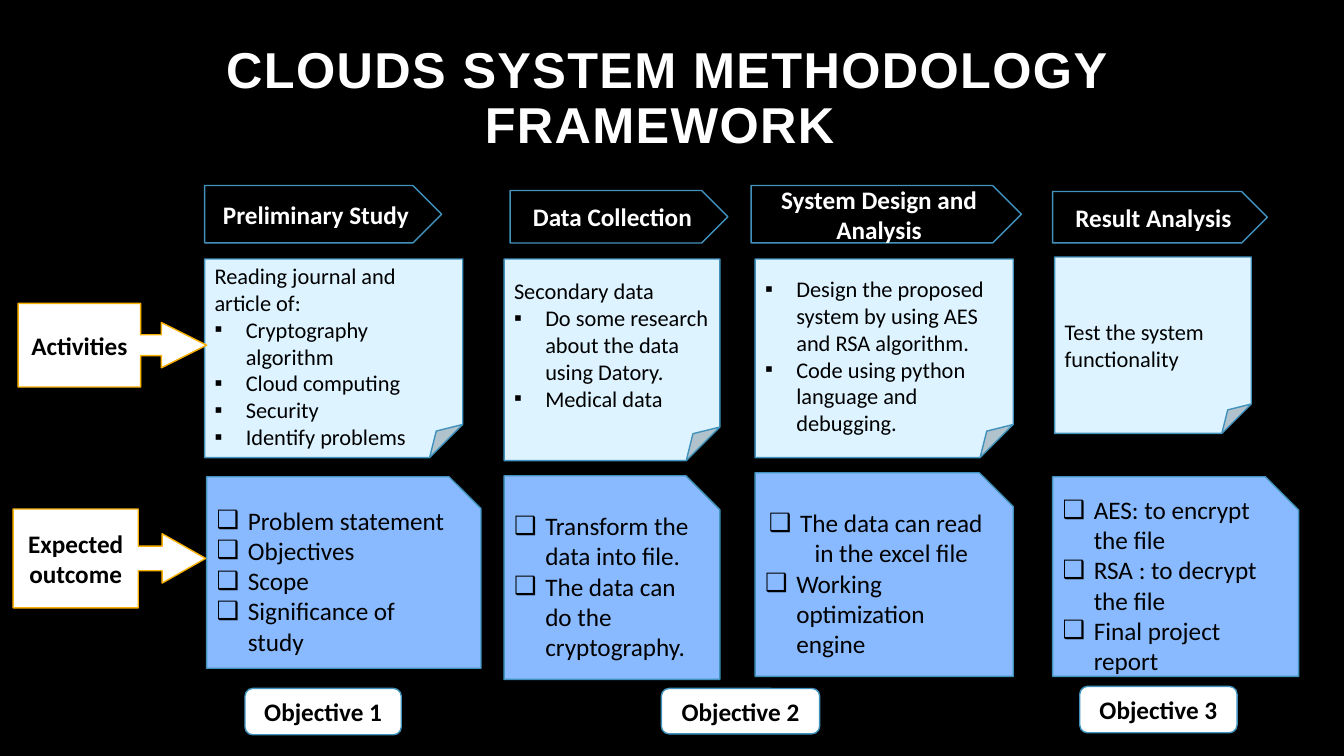
from lxml.etree import SubElement
from pptx import Presentation
from pptx.dml.color import RGBColor
from pptx.enum.shapes import MSO_SHAPE
from pptx.enum.text import MSO_ANCHOR, PP_ALIGN
from pptx.oxml.ns import qn
from pptx.util import Inches, Pt

BLACK = RGBColor(0x00, 0x00, 0x00)
WHITE = RGBColor(0xFF, 0xFF, 0xFF)
TEAL = RGBColor(0x40, 0x92, 0xBD)
AMBER = RGBColor(0xF8, 0xB0, 0x04)
PALE = RGBColor(0xDD, 0xF3, 0xFF)
BLUE = RGBColor(0x89, 0xBA, 0xFF)

deck = Presentation()
deck.slide_width = Inches(13.33)
deck.slide_height = Inches(7.5)
page = deck.slides.add_slide(deck.slide_layouts[6])
page.background.fill.solid()
page.background.fill.fore_color.rgb = BLACK


def add_box(kind, place, fill, line):
    box = page.shapes.add_shape(kind, *[Inches(length) for length in place])
    box.shadow.inherit = False
    box.fill.solid()
    box.fill.fore_color.rgb = fill
    box.line.color.rgb = line
    box.line.width = Pt(1)
    box.text_frame.word_wrap = True
    box.text_frame.vertical_anchor = MSO_ANCHOR.MIDDLE
    return box


def write(box, lines, size=18, color=BLACK, bold=False, align=PP_ALIGN.LEFT, bullet=None):
    frame = box.text_frame
    for number, line in enumerate(lines):
        para = frame.paragraphs[0] if number == 0 else frame.add_paragraph()
        para.alignment = align
        if bullet and not line.startswith(("Reading", "Secondary", "Test")):
            settings = para._p.get_or_add_pPr()
            settings.set("marL", str(Inches(0.31)))
            settings.set("indent", str(-Inches(0.31)))
            SubElement(settings, qn("a:buFont"), typeface="Arial")
            SubElement(settings, qn("a:buChar"), char=bullet)
        span = para.add_run()
        span.text = line
        span.font.name = "Calibri"
        span.font.size = Pt(size)
        span.font.bold = bold
        span.font.color.rgb = color


title = page.shapes.add_textbox(Inches(1.62), Inches(0.29), Inches(10), Inches(1.29))
title.text_frame.word_wrap = True
title.text_frame.vertical_anchor = MSO_ANCHOR.BOTTOM
para = title.text_frame.paragraphs[0]
para.alignment = PP_ALIGN.CENTER
para.line_spacing = 0.9
span = para.add_run()
span.text = "CLOUDS SYSTEM METHODOLOGY FRAMEWORK "
span.font.name = "Arial"
span.font.size = Pt(36)
span.font.bold = True
span.font.color.rgb = WHITE
span._r.get_or_add_rPr().set("spc", "100")

objectives = [(2.43, 6.83, 1.55, 0.46), (6.56, 6.83, 1.57, 0.45), (10.71, 6.81, 1.56, 0.46)]
for number, place in enumerate(objectives, 1):
    box = add_box(MSO_SHAPE.ROUNDED_RECTANGLE, place, WHITE, TEAL)
    write(box, [f"Objective {number}"], bold=True, align=PP_ALIGN.CENTER)

phases = [
    ("Preliminary Study", (2.03, 1.84, 2.35, 0.57)),
    ("Data Collection", (5.06, 1.89, 2.16, 0.52)),
    ("System Design and Analysis", (7.45, 1.84, 2.68, 0.57)),
    ("Result Analysis", (10.44, 1.9, 2.13, 0.51)),
]
for name, place in phases:
    box = add_box(MSO_SHAPE.PENTAGON, place, BLACK, TEAL)
    write(box, [name], color=WHITE, bold=True, align=PP_ALIGN.CENTER)

activities = [
    ((2.03, 2.57, 2.56, 1.97), 0.03, [
        "Reading journal and article of:", "Cryptography algorithm",
        "Cloud computing", "Security", "Identify problems"]),
    ((5, 2.57, 2.14, 2), 0.18, [
        "Secondary data", "Do some research about the data using Datory.",
        "Medical data"]),
    ((7.49, 2.57, 2.56, 1.97), 0.16, [
        "Design the proposed system by using AES and RSA algorithm.",
        "Code using python language and debugging."]),
    ((10.46, 2.55, 1.95, 1.75), 0.61, ["Test the system functionality"]),
]
for place, top, lines in activities:
    box = add_box(MSO_SHAPE.FOLDED_CORNER, place, PALE, TEAL)
    box.text_frame.vertical_anchor = MSO_ANCHOR.TOP
    box.text_frame.margin_top = Inches(top)
    box.text_frame.margin_bottom = 0
    write(box, lines, size=16, bullet="▪")

outcomes = [
    ((2.05, 4.73, 2.72, 1.9), [
        "Problem statement", "Objectives", "Scope", "Significance of study"]),
    ((5, 4.72, 2.14, 2.02), [
        "Transform the data into file.", "The data can do the cryptography."]),
    ((7.49, 4.69, 2.56, 2.02), [
        "The data can read in the excel file", "Working optimization engine"]),
    ((10.44, 4.73, 2.44, 1.98), [
        "AES: to encrypt the file", "RSA : to decrypt the file",
        "Final project report"]),
]
for place, lines in outcomes:
    box = add_box(MSO_SHAPE.SNIP_1_RECTANGLE, place, BLUE, TEAL)
    write(box, lines, bullet="❑")
    if lines[0].startswith("The data"):
        box.text_frame.paragraphs[0].alignment = PP_ALIGN.CENTER

row_labels = [
    ("Activities", (0.18, 3.01, 1.87, 0.83), (0.25, 0.27, 0.54, 0.65)),
    ("Expected outcome", (0.13, 5.05, 1.91, 0.98), (0.25, 0.25, 0.44, 0.65)),
]
for name, place, proportions in row_labels:
    box = add_box(MSO_SHAPE.RIGHT_ARROW_CALLOUT, place, WHITE, AMBER)
    for index, proportion in enumerate(proportions):
        box.adjustments[index] = proportion
    write(box, [name], bold=True, align=PP_ALIGN.CENTER)

deck.save("out.pptx")
